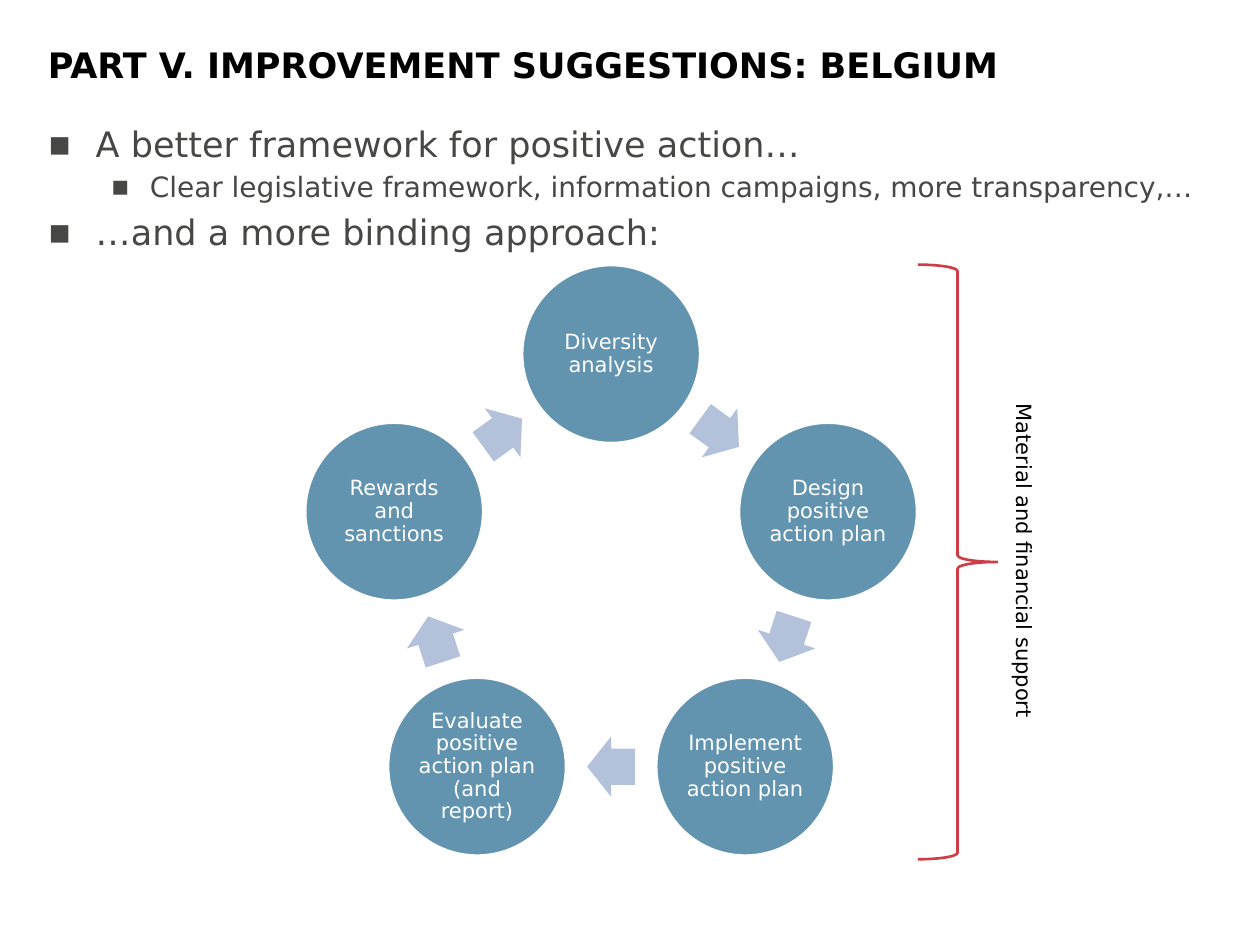
from math import cos, radians, sin

from lxml.etree import SubElement
from pptx import Presentation
from pptx.dml.color import RGBColor
from pptx.enum.shapes import MSO_SHAPE as Shape
from pptx.enum.text import MSO_ANCHOR as Anchor, MSO_AUTO_SIZE as AutoSize, PP_ALIGN as Align
from pptx.oxml.ns import qn
from pptx.util import Inches, Pt

FONT = "DejaVu Sans"
BLACK = RGBColor(0x00, 0x00, 0x00)
WHITE = RGBColor(0xFF, 0xFF, 0xFF)
GREY = RGBColor(0x47, 0x47, 0x46)
BLUE = RGBColor(0x62, 0x94, 0xB0)
PALE_BLUE = RGBColor(0xB3, 0xC1, 0xDB)
RED = RGBColor(0xCE, 0x3C, 0x47)

TITLE = "PART V. IMPROVEMENT SUGGESTIONS: BELGIUM"
BULLETS = [
    (0, "A better framework for positive action…"),
    (1, "Clear legislative framework, information campaigns, more transparency,…"),
    (0, "…and a more binding approach:"),
]
STEPS = [
    "Diversity analysis",
    "Design positive action plan",
    "Implement positive action plan",
    "Evaluate positive action plan (and report)",
    "Rewards and sanctions",
]
SUPPORT = "Material and financial support"

# Per bullet level: text size, left indent, hanging indent, space before
LEVELS = [(20, 0.38, 0.38, 4), (16, 0.81, 0.31, 3)]
LEFT, WIDTH = 0.28, 9.45
CENTER_X, CENTER_Y, RADIUS = 4.85, 4.62, 1.81
CIRCLE = 1.42
ARROW_WIDTH, ARROW_HEIGHT = 0.38, 0.48


def place(shape, left, top, width, height):
    shape.left, shape.top = Inches(left), Inches(top)
    shape.width, shape.height = Inches(width), Inches(height)


def style(paragraph, size, color, bold=False):
    font = paragraph.font
    font.name, font.size, font.bold = FONT, Pt(size), bold
    font.color.rgb = color


def add_shape(slide, kind, center_x, center_y, width, height, fill=None):
    shape = slide.shapes.add_shape(
        kind, Inches(center_x - width / 2), Inches(center_y - height / 2),
        Inches(width), Inches(height))
    shape.shadow.inherit = False
    if fill is None:
        shape.fill.background()
    else:
        shape.fill.solid()
        shape.fill.fore_color.rgb = fill
    return shape


def ring_point(angle, radius):
    """Point on the ring, with the angle in degrees clockwise from the top."""
    return (CENTER_X + radius * sin(radians(angle)),
            CENTER_Y - radius * cos(radians(angle)))


def add_title(slide):
    title = slide.shapes.title
    place(title, LEFT, 0.21, WIDTH, 0.6)
    frame = title.text_frame
    frame.text = TITLE
    frame.auto_size = AutoSize.NONE
    frame.vertical_anchor = Anchor.MIDDLE
    frame.paragraphs[0].alignment = Align.LEFT
    style(frame.paragraphs[0], 20, BLACK, bold=True)


def add_bullets(slide):
    body = slide.placeholders[1]
    place(body, LEFT, 0.92, WIDTH, 5.51)
    frame = body.text_frame
    frame.text = "\n".join(text for _, text in BULLETS)
    frame.auto_size = AutoSize.NONE
    for index, (paragraph, (level, _)) in enumerate(zip(frame.paragraphs, BULLETS)):
        size, indent, hanging, space = LEVELS[level]
        paragraph.level = level
        paragraph.space_before = Pt(space if index else 0)
        properties = paragraph._p.get_or_add_pPr()
        properties.set("marL", str(Inches(indent)))
        properties.set("indent", str(-Inches(hanging)))
        SubElement(properties, qn("a:buFont"), typeface=FONT)
        SubElement(properties, qn("a:buChar"), char="▪")
        style(paragraph, size, GREY)


def add_cycle(slide):
    step_angle = 360 / len(STEPS)
    for index, text in enumerate(STEPS):
        angle = index * step_angle
        circle = add_shape(slide, Shape.OVAL, *ring_point(angle, RADIUS), CIRCLE, CIRCLE, BLUE)
        circle.line.color.rgb = WHITE
        circle.line.width = Pt(2)
        frame = circle.text_frame
        frame.text = text
        frame.word_wrap = True
        frame.vertical_anchor = Anchor.MIDDLE
        frame.margin_left = frame.margin_right = Inches(0.02)
        frame.margin_top = frame.margin_bottom = Inches(0.02)
        paragraph = frame.paragraphs[0]
        paragraph.alignment = Align.CENTER
        paragraph.line_spacing = 0.9
        style(paragraph, 12, WHITE)

        # Each arrow sits midway between two neighbouring circles
        halfway = angle + step_angle / 2
        middle = ring_point(halfway, RADIUS * cos(radians(step_angle / 2)))
        arrow = add_shape(slide, Shape.RIGHT_ARROW, *middle,
                          ARROW_WIDTH, ARROW_HEIGHT, PALE_BLUE)
        arrow.line.fill.background()
        arrow.adjustments[0], arrow.adjustments[1] = 0.6, 0.5
        arrow.rotation = halfway


def add_support(slide):
    brace = add_shape(slide, Shape.RIGHT_BRACE, 7.6, 4.46, 0.63, 4.72)
    brace.line.color.rgb = RED
    brace.line.width = Pt(1.5)

    label = slide.shapes.add_textbox(0, 0, 0, 0)
    place(label, 5.22, 4.3, 5.82, 0.3)
    label.rotation = 90
    frame = label.text_frame
    frame.text = SUPPORT
    frame.word_wrap = True
    frame.paragraphs[0].alignment = Align.CENTER
    style(frame.paragraphs[0], 12, BLACK)


def main():
    presentation = Presentation()
    presentation.slide_width, presentation.slide_height = Inches(10), Inches(7.5)
    slide = presentation.slides.add_slide(presentation.slide_layouts[1])
    add_title(slide)
    add_bullets(slide)
    add_cycle(slide)
    add_support(slide)
    presentation.save("out.pptx")


if __name__ == "__main__":
    main()
